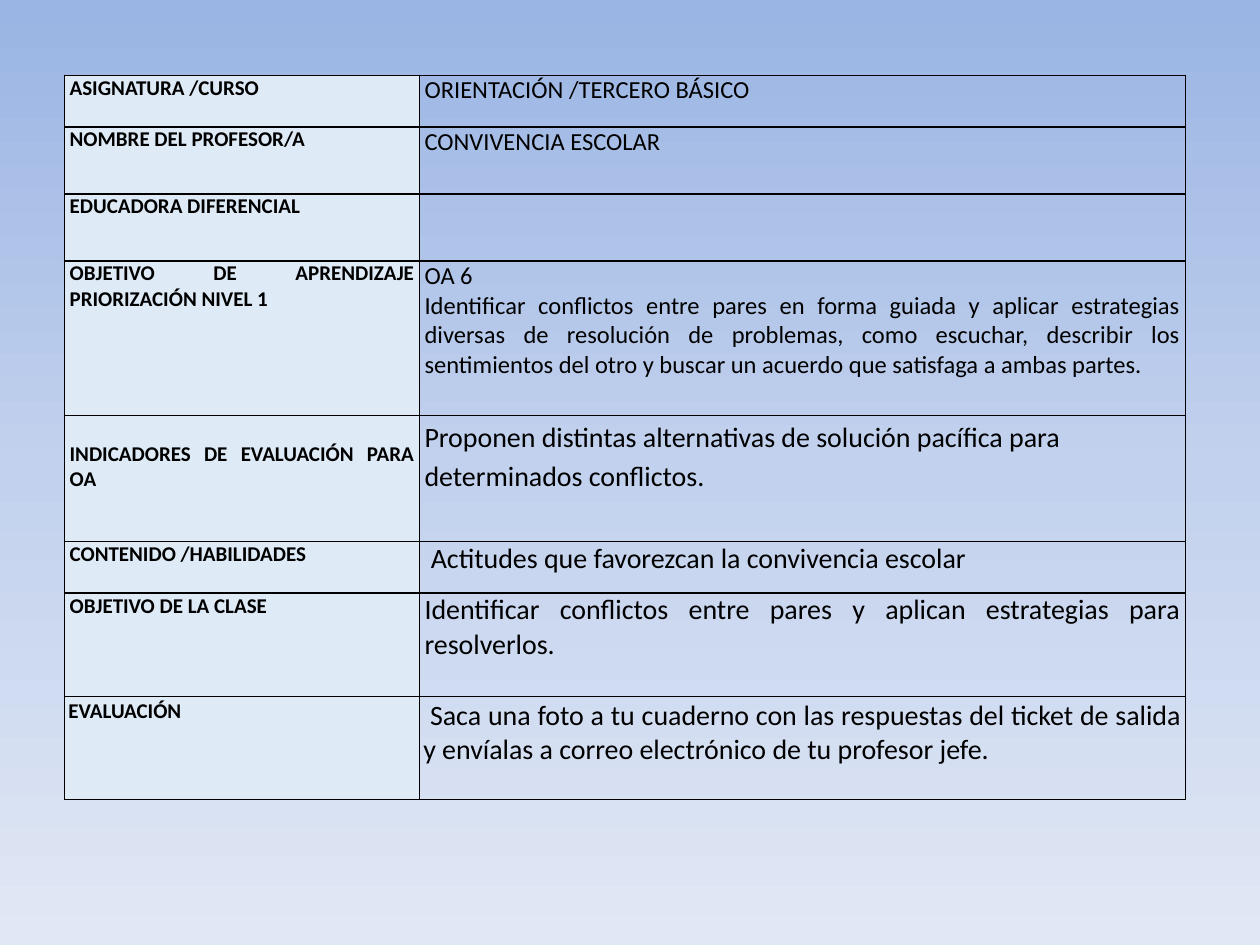
import copy
from dataclasses import dataclass

import pptx
import pptx.dml.color
import pptx.enum.text
import pptx.oxml
import pptx.oxml.ns
import pptx.util
from lxml import etree

Pt = pptx.util.Pt
qn = pptx.oxml.ns.qn
ALIGN = pptx.enum.text.PP_ALIGN

COLORS = {
    "sky_top": "9AB5E4",
    "sky_middle": "C2D1ED",
    "sky_bottom": "E1E8F5",
    "heading": "DEEAF6",
    "ink": "000000",
}


def rgb(name):
    return pptx.dml.color.RGBColor.from_string(COLORS[name])


@dataclass
class Entry:
    heading: str
    paragraphs: tuple
    height: float
    size: float = 14
    align: ALIGN = ALIGN.JUSTIFY
    line_spacing: float = 1
    heading_top: float = 0
    content_top: float = 0
    side: float = 2.9


class LessonSlide:
    font_name = "Calibri"
    heading_size = 12
    border_width = 1

    def __init__(self, presentation):
        self.slide = presentation.slides.add_slide(presentation.slide_layouts[6])

    def gradient_background(self, color_names):
        fill = self.slide.background.fill
        fill.gradient()
        fill.gradient_angle = 270
        stop_list = self.slide.element.find(".//" + qn("a:gsLst"))
        while len(stop_list) < len(color_names):
            stop_list.append(copy.deepcopy(stop_list[-1]))
        for index, (stop, name) in enumerate(zip(fill.gradient_stops, color_names)):
            stop.position = index / (len(color_names) - 1)
            stop.color.rgb = rgb(name)

    def border(self, cell):
        properties = cell._tc.get_or_add_tcPr()
        for side in ("a:lnL", "a:lnR", "a:lnT", "a:lnB"):
            line = etree.SubElement(properties, qn(side), w=str(Pt(self.border_width)))
            solid = etree.SubElement(line, qn("a:solidFill"))
            etree.SubElement(solid, qn("a:srgbClr"), val=COLORS["ink"])

    def cell(self, cell, paragraphs, size, side, top, bold=False, fill=None,
             align=ALIGN.JUSTIFY, line_spacing=1):
        self.border(cell)
        if fill:
            cell.fill.solid()
            cell.fill.fore_color.rgb = rgb(fill)
        else:
            cell.fill.background()
        cell.margin_left = cell.margin_right = Pt(side)
        cell.margin_top, cell.margin_bottom = Pt(top), Pt(0)
        cell.text_frame.text = "\n".join(paragraphs)
        for paragraph in cell.text_frame.paragraphs:
            paragraph.alignment = align
            paragraph.line_spacing = line_spacing
            paragraph.font.name = self.font_name
            paragraph.font.size = Pt(size)
            paragraph.font.bold = bold
            paragraph.font.color.rgb = rgb("ink")

    def table(self, left, top, widths, entries):
        height = sum(entry.height for entry in entries)
        table = self.slide.shapes.add_table(
            len(entries), len(widths), Pt(left), Pt(top), Pt(sum(widths)), Pt(height)
        ).table
        table.first_row = table.horz_banding = False
        for column, width in zip(table.columns, widths):
            column.width = Pt(width)
        for index, entry in enumerate(entries):
            table.rows[index].height = Pt(entry.height)
            self.cell(table.cell(index, 0), (entry.heading,), self.heading_size,
                      entry.side, entry.heading_top, bold=True, fill="heading")
            self.cell(table.cell(index, 1), entry.paragraphs, entry.size,
                      entry.side, entry.content_top, align=entry.align,
                      line_spacing=entry.line_spacing)


ENTRIES = [
    Entry("ASIGNATURA /CURSO", ("ORIENTACIÓN /TERCERO BÁSICO",), 29.5),
    Entry("NOMBRE DEL PROFESOR/A", ("CONVIVENCIA ESCOLAR",), 38.3),
    Entry("EDUCADORA DIFERENCIAL", (), 38.3),
    Entry(
        "OBJETIVO DE APRENDIZAJE PRIORIZACIÓN NIVEL 1",
        (
            "OA 6",
            "Identificar conflictos entre pares en forma guiada y aplicar estrategias "
            "diversas de resolución de problemas, como escuchar, describir los "
            "sentimientos del otro y buscar un acuerdo que satisfaga a ambas partes.",
        ),
        88.4,
    ),
    Entry(
        "INDICADORES DE EVALUACIÓN PARA OA",
        ("Proponen distintas alternativas de solución pacífica para "
         "determinados conflictos.",),
        72, size=16, align=ALIGN.LEFT, line_spacing=1.15, heading_top=14.6,
    ),
    Entry("CONTENIDO /HABILIDADES",
          (" Actitudes que favorezcan la convivencia escolar",), 29.5, size=16),
    Entry(
        "OBJETIVO DE LA CLASE",
        ("Identificar conflictos entre pares y aplican estrategias para resolverlos.",),
        59, size=16,
    ),
    Entry(
        "EVALUACIÓN",
        (" Saca una foto a tu cuaderno con las respuestas del ticket de salida "
         "y envíalas a correo electrónico de tu profesor jefe.",),
        59, size=16, heading_top=1.4, content_top=1.4, side=2.2,
    ),
]


def main():
    presentation = pptx.Presentation()
    presentation.slide_width, presentation.slide_height = Pt(720), Pt(540)
    lesson = LessonSlide(presentation)
    lesson.gradient_background(("sky_top", "sky_middle", "sky_bottom"))
    lesson.table(36.9, 43, (202.8, 437.8), ENTRIES)
    presentation.save("out.pptx")


if __name__ == "__main__":
    main()
